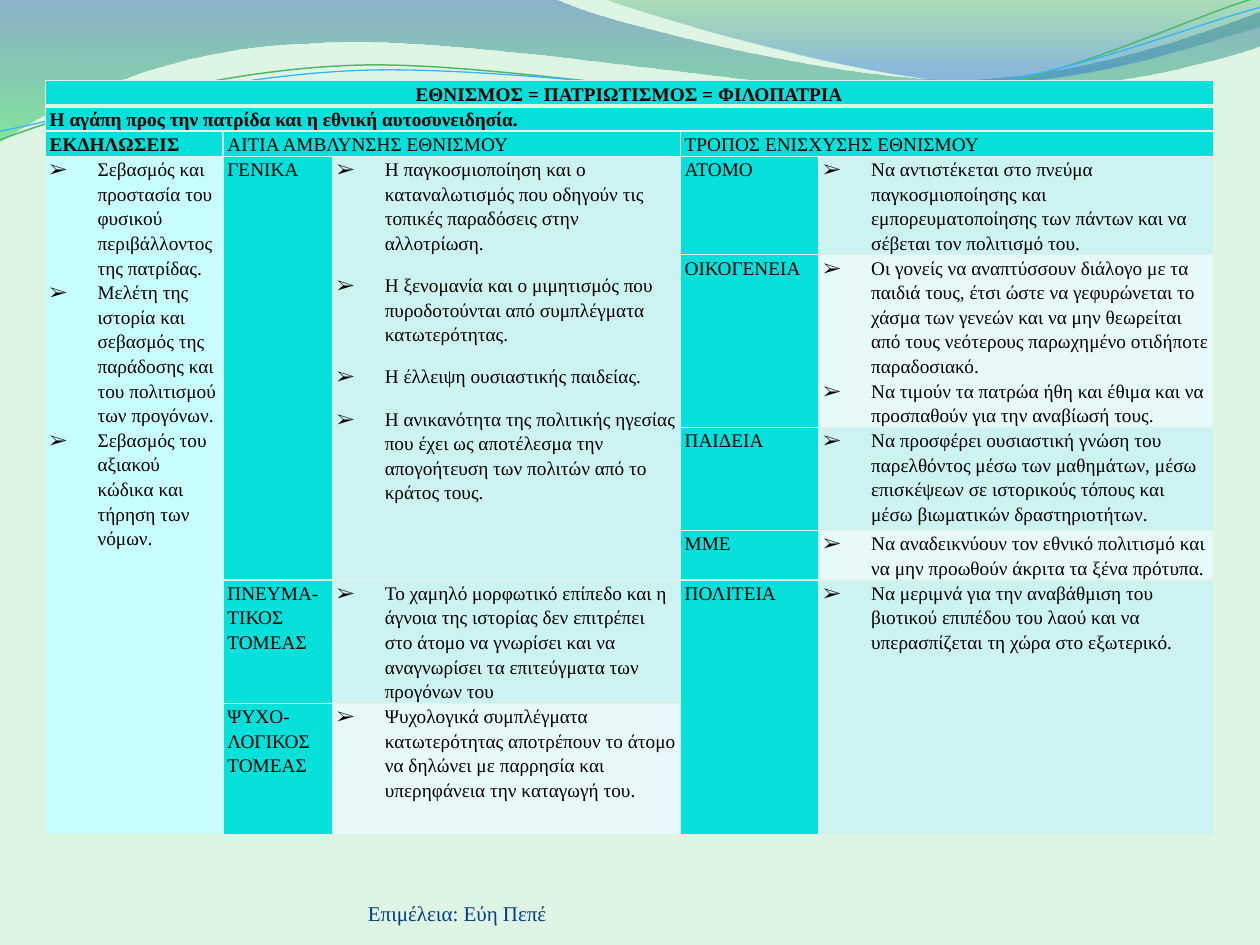
from dataclasses import dataclass

from lxml.etree import SubElement
from pptx import Presentation
from pptx.dml.color import RGBColor
from pptx.enum.text import MSO_ANCHOR as Anchor, PP_ALIGN as Align
from pptx.oxml import parse_xml
from pptx.oxml.ns import nsdecls, qn
from pptx.util import Inches, Pt

FONT = "Times New Roman"
PALE_GREEN, BLACK, NAVY = "DEF5E4", "000000", "073B81"
TURQUOISE, ICE, AQUA, MIST = "05E0DB", "C8FEFD", "CCF3F1", "E7F9F8"
COLUMNS = [1.41, 0.87, 2.76, 1.1, 3.13]
ROWS = [0.2, 0.2, 0.2, 0.78, 1.37, 0.82, 0.39, 0.98, 1.04]


@dataclass
class Entry:
    row: int
    column: int
    lines: list[str]
    fill: str = TURQUOISE
    rows: int = 1
    columns: int = 1
    bold: bool = False
    bulleted: bool = False
    align: Align = Align.LEFT
    space_after: int = 0


@dataclass
class Wave:
    """Straight steps are (x, y); Bézier steps hold three points in six numbers."""
    start: tuple[float, float]
    steps: list[tuple[float, ...]]
    stops: tuple = ()
    line: str = ""
    width: float = 0


WAVES = [
    Wave((0, 0), [(4.4, -0.01), (4.76, 0.17, 6.64, 0.63, 7.58, 0.63),
                  (8.53, 0.63, 9.58, 0.26, 10, 0.09), (10.01, 0.36),
                  (9.83, 0.44, 8.7, 0.76, 7.46, 0.75),
                  (6.22, 0.75, 3.82, 0.28, 2.57, 0.34),
                  (1.29, 0.36, 0.46, 0.83, -0.01, 1.13)],
         stops=((0, "2960A7", 45), (1, "35DA5E", 55))),
    Wave((4.79, -0.01), [(5.09, 0.11, 6.82, 0.62, 7.69, 0.65),
                         (8.56, 0.69, 9.61, 0.32, 10, 0.21), (10, 0)],
         stops=((0, "36A752", 30), (0.8, "2472D3", 45))),
    Wave((0, 1.11), [(0.48, 0.93, 1.58, 0.57, 2.77, 0.52),
                     (3.95, 0.47, 5.93, 0.89, 7.13, 0.8),
                     (8.33, 0.71, 9.38, 0.15, 9.98, -0.02)],
         line="50B86A", width=0.85),
    Wave((0, 1.04), [(0.47, 0.96, 1.64, 0.61, 2.83, 0.56),
                     (4.03, 0.51, 5.97, 0.84, 7.17, 0.75),
                     (8.36, 0.67, 9.41, 0.21, 10, 0.06)],
         line="31B6FD", width=0.75),
]

ENTRIES = [
    # Headings
    Entry(0, 0, ["ΕΘΝΙΣΜΟΣ = ΠΑΤΡΙΩΤΙΣΜΟΣ = ΦΙΛΟΠΑΤΡΙΑ"], columns=5, bold=True,
          align=Align.CENTER),
    Entry(1, 0, ["Η αγάπη προς την πατρίδα και η εθνική αυτοσυνειδησία."],
          columns=5, bold=True),
    Entry(2, 0, ["ΕΚΔΗΛΩΣΕΙΣ"], bold=True),
    Entry(2, 1, ["ΑΙΤΙΑ ΑΜΒΛΥΝΣΗΣ ΕΘΝΙΣΜΟΥ"], columns=2),
    Entry(2, 3, ["ΤΡΟΠΟΣ ΕΝΙΣΧΥΣΗΣ ΕΘΝΙΣΜΟΥ"], columns=2),
    # Manifestations
    Entry(3, 0, ["Σεβασμός και προστασία του φυσικού περιβάλλοντος της πατρίδας.",
                 "Μελέτη της ιστορία και σεβασμός της παράδοσης και του πολιτισμού "
                 "των προγόνων.",
                 "Σεβασμός του αξιακού κώδικα και τήρηση των νόμων."],
          ICE, rows=6, bulleted=True),
    # Causes
    Entry(3, 1, ["ΓΕΝΙΚΑ"], rows=4),
    Entry(3, 2, ["Η παγκοσμιοποίηση και ο καταναλωτισμός που οδηγούν τις τοπικές "
                 "παραδόσεις στην αλλοτρίωση.",
                 "Η ξενομανία και ο μιμητισμός που πυροδοτούνται από συμπλέγματα "
                 "κατωτερότητας.",
                 "Η έλλειψη ουσιαστικής παιδείας.",
                 "Η ανικανότητα της πολιτικής ηγεσίας που έχει ως αποτέλεσμα την "
                 "απογοήτευση των πολιτών από το κράτος τους."],
          AQUA, rows=4, bulleted=True, space_after=10),
    Entry(7, 1, ["ΠΝΕΥΜΑ-ΤΙΚΟΣ ΤΟΜΕΑΣ"]),
    Entry(7, 2, ["Το χαμηλό μορφωτικό επίπεδο και η άγνοια της ιστορίας δεν επιτρέπει "
                 "στο άτομο να γνωρίσει και να αναγνωρίσει τα επιτεύγματα των "
                 "προγόνων του"], AQUA, bulleted=True),
    Entry(8, 1, ["ΨΥΧΟ-ΛΟΓΙΚΟΣ ΤΟΜΕΑΣ"]),
    Entry(8, 2, ["Ψυχολογικά συμπλέγματα κατωτερότητας αποτρέπουν το άτομο να δηλώνει "
                 "με παρρησία και υπερηφάνεια την καταγωγή του."], MIST, bulleted=True),
    # Ways of strengthening
    Entry(3, 3, ["ΑΤΟΜΟ"]),
    Entry(3, 4, ["Να αντιστέκεται στο πνεύμα παγκοσμιοποίησης και εμπορευματοποίησης "
                 "των πάντων και να σέβεται τον πολιτισμό του."], AQUA, bulleted=True),
    Entry(4, 3, ["ΟΙΚΟΓΕΝΕΙΑ"]),
    Entry(4, 4, ["Οι γονείς να αναπτύσσουν διάλογο με τα παιδιά τους, έτσι ώστε να "
                 "γεφυρώνεται το χάσμα των γενεών και να μην θεωρείται από τους "
                 "νεότερους παρωχημένο οτιδήποτε παραδοσιακό.",
                 "Να τιμούν τα πατρώα ήθη και έθιμα και να προσπαθούν για την "
                 "αναβίωσή τους."], MIST, bulleted=True),
    Entry(5, 3, ["ΠΑΙΔΕΙΑ"]),
    Entry(5, 4, ["Να προσφέρει ουσιαστική γνώση του παρελθόντος μέσω των μαθημάτων, "
                 "μέσω επισκέψεων σε ιστορικούς τόπους και μέσω βιωματικών "
                 "δραστηριοτήτων."], AQUA, bulleted=True),
    Entry(6, 3, ["ΜΜΕ"]),
    Entry(6, 4, ["Να αναδεικνύουν τον εθνικό πολιτισμό και να μην προωθούν άκριτα τα "
                 "ξένα πρότυπα."], MIST, bulleted=True),
    Entry(7, 3, ["ΠΟΛΙΤΕΙΑ"], rows=2),
    Entry(7, 4, ["Να μεριμνά για την αναβάθμιση του βιοτικού επιπέδου του λαού και να "
                 "υπερασπίζεται τη χώρα στο εξωτερικό."], AQUA, rows=2, bulleted=True),
]


def color(value: str) -> RGBColor:
    return RGBColor.from_string(value)


def format_font(font, size: float, value: str, bold: bool = False) -> None:
    font.name, font.size, font.bold = FONT, Pt(size), bold
    font.color.rgb = color(value)


def bend(shape, steps: list[tuple[float, ...]]) -> None:
    """Join the three line segments of each Bézier step into one curve."""
    segments = iter(list(shape._element.iter(qn("a:lnTo"))))
    for step in steps:
        first = next(segments)
        if len(step) == 6:
            first.tag = qn("a:cubicBezTo")
            for _ in range(2):
                extra = next(segments)
                first.append(extra[0])
                extra.getparent().remove(extra)


def draw_wave(slide, wave: Wave) -> None:
    points = [(Inches(step[i]), Inches(step[i + 1]))
              for step in wave.steps for i in range(0, len(step), 2)]
    builder = slide.shapes.build_freeform(*map(Inches, wave.start))
    builder.add_line_segments(points, close=bool(wave.stops))
    shape = builder.convert_to_shape()
    bend(shape, wave.steps)
    shape.shadow.inherit = False
    if not wave.stops:
        shape.fill.background()
        shape.line.color.rgb = color(wave.line)
        shape.line.width = Pt(wave.width)
        return
    shape.line.fill.background()
    shape.fill.gradient()
    shape.fill.gradient_angle = 270
    for stop, (position, value, _) in zip(shape.fill.gradient_stops, wave.stops):
        stop.position = position
        stop.color.rgb = color(value)
    for node, (_, _, opacity) in zip(shape._element.iter(qn("a:srgbClr")), wave.stops):
        SubElement(node, qn("a:alpha")).set("val", str(opacity * 1000))


def set_borders(cell, row: int) -> None:
    widths = {"L": 1, "R": 1, "T": 3 if row == 1 else 1, "B": 3 if row == 0 else 1}
    properties = cell._tc.get_or_add_tcPr()
    for index, (side, width) in enumerate(widths.items()):
        properties.insert(index, parse_xml(
            f'<a:ln{side} {nsdecls("a")} w="{Pt(width)}"><a:solidFill>'
            f'<a:srgbClr val="{PALE_GREEN}"/></a:solidFill></a:ln{side}>'))


def fill_entry(table, entry: Entry) -> None:
    cell = table.cell(entry.row, entry.column)
    if entry.rows * entry.columns > 1:
        cell.merge(table.cell(entry.row + entry.rows - 1, entry.column + entry.columns - 1))
    cell.fill.solid()
    cell.fill.fore_color.rgb = color(entry.fill)
    cell.text_frame.text = "\n".join(entry.lines)
    for paragraph in cell.text_frame.paragraphs:
        paragraph.alignment = entry.align
        paragraph.line_spacing = Pt(14.05)
        paragraph.space_after = Pt(entry.space_after)
        format_font(paragraph.runs[0].font, 11, BLACK, entry.bold)
        if entry.bulleted:
            properties = paragraph._p.get_or_add_pPr()
            properties.set("marL", str(Inches(0.38)))
            properties.set("indent", str(-Inches(0.38)))
            SubElement(properties, qn("a:buFont")).set("typeface", FONT)
            SubElement(properties, qn("a:buChar")).set("char", "➢")


def draw_table(slide) -> None:
    table = slide.shapes.add_table(len(ROWS), len(COLUMNS), Inches(0.36), Inches(0.64),
                                   Inches(sum(COLUMNS)), Inches(sum(ROWS))).table
    table.first_row = table.horz_banding = False
    for column, width in zip(table.columns, COLUMNS):
        column.width = Inches(width)
    for row, height in zip(table.rows, ROWS):
        row.height = Inches(height)
    for entry in ENTRIES:
        fill_entry(table, entry)
    for index, row in enumerate(table.rows):
        for cell in row.cells:
            cell.margin_left = cell.margin_right = Pt(2.5)
            cell.margin_top = cell.margin_bottom = 0
            set_borders(cell, index)


def draw_credit(slide) -> None:
    frame = slide.shapes.add_textbox(Inches(2.92), Inches(6.95),
                                     Inches(3.67), Inches(0.4)).text_frame
    frame.word_wrap = True
    frame.vertical_anchor = Anchor.BOTTOM
    frame.margin_left = frame.margin_right = frame.margin_top = frame.margin_bottom = 0
    frame.text = "Επιμέλεια: Εύη Πεπέ"
    format_font(frame.paragraphs[0].runs[0].font, 12, NAVY)


def main() -> None:
    presentation = Presentation()
    presentation.slide_width, presentation.slide_height = Inches(10), Inches(7.5)
    slide = presentation.slides.add_slide(presentation.slide_layouts[6])
    slide.background.fill.solid()
    slide.background.fill.fore_color.rgb = color(PALE_GREEN)
    for wave in WAVES:
        draw_wave(slide, wave)
    draw_credit(slide)
    draw_table(slide)
    presentation.save("out.pptx")


if __name__ == "__main__":
    main()
